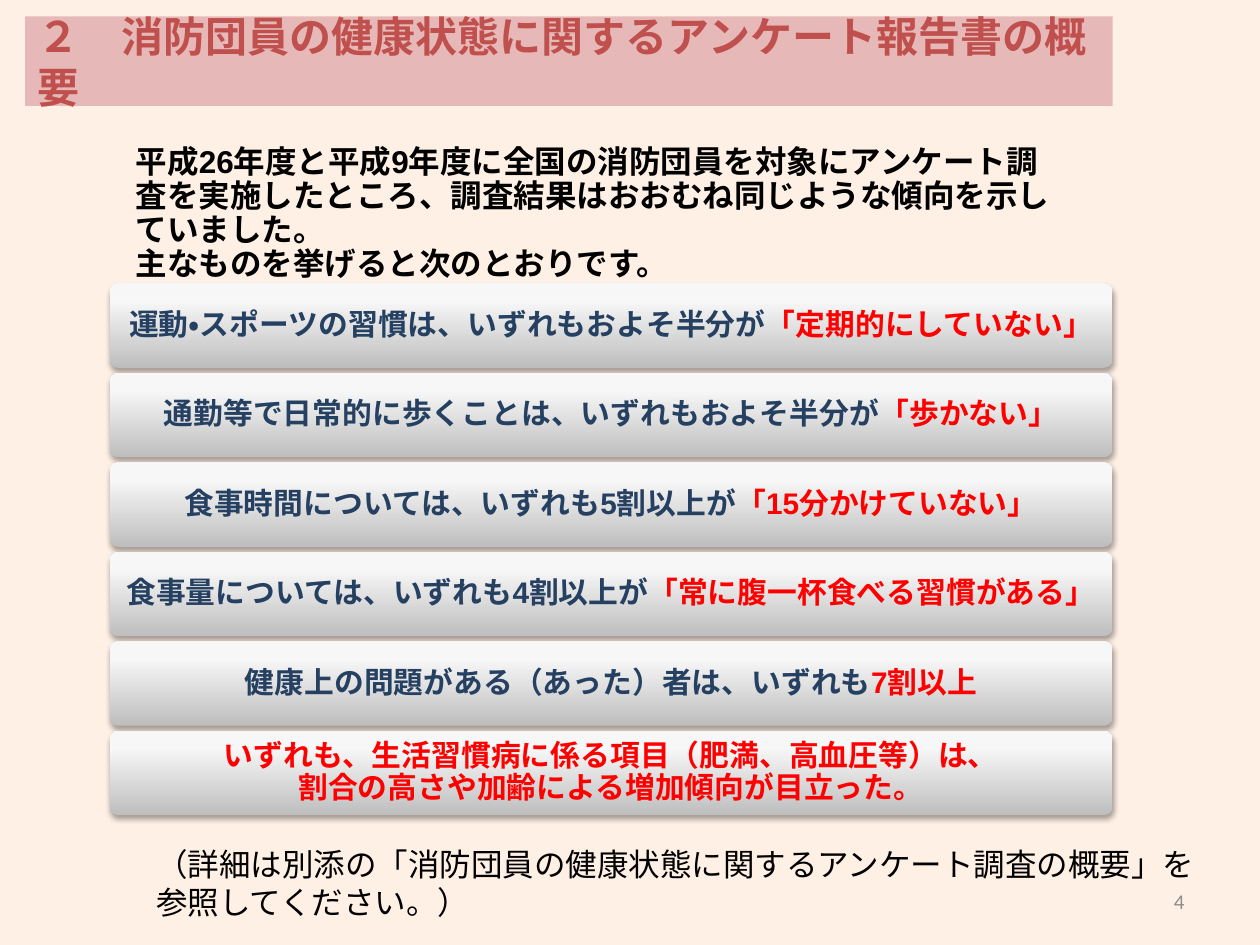
from dataclasses import dataclass
from typing import Any, NamedTuple

import pptx
import pptx.dml.color
import pptx.enum.lang
import pptx.enum.shapes
import pptx.enum.text
import pptx.oxml
import pptx.oxml.ns
import pptx.util

EMU_PER_PX = 9144
ANCHOR = pptx.enum.text.MSO_ANCHOR
ALIGN = pptx.enum.text.PP_ALIGN
AUTO_SIZE = pptx.enum.text.MSO_AUTO_SIZE


@dataclass(frozen=True)
class Theme:
    background: str = "FFF0E5"
    banner: str = "E6B9B8"
    heading: str = "C0504D"
    body: str = "000000"
    finding: str = "254061"
    emphasis: str = "FF0000"
    page: str = "8C8C8C"
    bar_stops: tuple[tuple[int, str], ...] = ((0, "BEBEBE"), (80, "F7F7F7"), (100, "F8F8F8"))
    heading_size: int = 24
    body_size: int = 18
    finding_size: int = 17
    page_size: int = 12
    heading_font: str = "Calibri"
    body_font: str = "Arial"


THEME = Theme()


class Box(NamedTuple):
    left: int
    top: int
    width: int
    height: int


class Span(NamedTuple):
    text: str
    color: str


class Style(NamedTuple):
    size: int
    font: str
    bold: bool
    frame: dict[str, Any]
    paragraph: dict[str, Any]


TIGHT = {"line_spacing": 0.9, "space_after": pptx.util.Pt(6)}
GROWING = {"word_wrap": True, "auto_size": AUTO_SIZE.SHAPE_TO_FIT_TEXT}
MIDDLE = {"word_wrap": True, "auto_size": AUTO_SIZE.NONE, "vertical_anchor": ANCHOR.MIDDLE}

HEADING = Style(THEME.heading_size, THEME.heading_font, True, MIDDLE, {"alignment": ALIGN.LEFT})
INTRO = Style(THEME.body_size, THEME.body_font, True, GROWING, TIGHT)
NOTE = Style(THEME.body_size, THEME.body_font, False, GROWING, {})
PAGE = Style(THEME.page_size, THEME.heading_font, False, MIDDLE, {"alignment": ALIGN.RIGHT})


def px(length: int) -> int:
    return length * EMU_PER_PX


FINDING = Style(
    THEME.finding_size, THEME.body_font, True,
    MIDDLE | {"margin_left": px(5), "margin_right": px(5),
              "margin_top": px(5), "margin_bottom": px(5)},
    TIGHT | {"alignment": ALIGN.CENTER},
)

FIRST_BAR = Box(87, 225, 796, 67)
BAR_PITCH = 71
FINDINGS = (
    ("運動・スポーツの習慣は、いずれもおよそ半分が", "「定期的にしていない」"),
    ("通勤等で日常的に歩くことは、いずれもおよそ半分が", "「歩かない」"),
    ("食事時間については、いずれも5割以上が", "「15分かけていない」"),
    ("食事量については、いずれも4割以上が", "「常に腹一杯食べる習慣がある」"),
    ("健康上の問題がある（あった）者は、いずれも", "7割以上"),
    ("", "いずれも、生活習慣病に係る項目（肥満、高血圧等）は、\n割合の高さや加齢による増加傾向が目立った。"),
)


def rgb(color: str) -> pptx.dml.color.RGBColor:
    return pptx.dml.color.RGBColor.from_string(color)


def apply(target: Any, values: dict[str, Any]) -> None:
    for name, value in values.items():
        setattr(target, name, value)


def place(shape: Any, box: Box) -> None:
    apply(shape, {side: px(length) for side, length in box._asdict().items()})


def write(shape: Any, spans: list[Span], style: Style) -> None:
    frame = shape.text_frame
    apply(frame, style.frame)
    paragraph = frame.paragraphs[0]
    apply(paragraph, style.paragraph)
    for span in spans:
        for number, line in enumerate(span.text.split("\n")):
            if number:
                paragraph.add_line_break()
            run = paragraph.add_run()
            run.text = line
            apply(run.font, {
                "size": pptx.util.Pt(style.size),
                "name": style.font,
                "bold": style.bold,
                "language_id": pptx.enum.lang.MSO_LANGUAGE_ID.JAPANESE,
            })
            run.font.color.rgb = rgb(span.color)


def add_text(slide: Any, box: Box, span: Span, style: Style) -> None:
    write(slide.shapes.add_textbox(*map(px, box)), [span], style)


def shade(shape: Any) -> None:
    namespace = pptx.oxml.ns.nsdecls("a")
    stops = "".join(
        f'<a:gs pos="{position * 1000}"><a:srgbClr val="{color}"/></a:gs>'
        for position, color in THEME.bar_stops
    )
    shape.fill.gradient()
    shape.fill.gradient_angle = 90
    properties = shape.element.spPr
    old_stops = properties.find(".//" + pptx.oxml.ns.qn("a:gsLst"))
    old_stops.getparent().replace(
        old_stops, pptx.oxml.parse_xml(f"<a:gsLst {namespace}>{stops}</a:gsLst>"))
    shape.shadow.inherit = False
    properties.find(pptx.oxml.ns.qn("a:effectLst")).append(pptx.oxml.parse_xml(
        f'<a:outerShdw {namespace} blurRad="40000" dist="23000" dir="5400000" rotWithShape="0">'
        '<a:srgbClr val="000000"><a:alpha val="35000"/></a:srgbClr></a:outerShdw>'))


def add_finding(slide: Any, row: int, lead: str, result: str) -> None:
    box = FIRST_BAR._replace(top=FIRST_BAR.top + row * BAR_PITCH)
    bar = slide.shapes.add_shape(
        pptx.enum.shapes.MSO_SHAPE.ROUNDED_RECTANGLE, *map(px, box))
    bar.adjustments[0] = 0.1
    bar.line.fill.background()
    shade(bar)
    spans = [Span(lead, THEME.finding), Span(result, THEME.emphasis)]
    write(bar, [span for span in spans if span.text], FINDING)


def main() -> None:
    deck = pptx.Presentation()
    apply(deck, {"slide_width": px(1000), "slide_height": px(750)})
    slide = deck.slides.add_slide(deck.slide_layouts.get_by_name("Title Only"))
    slide.background.fill.solid()
    slide.background.fill.fore_color.rgb = rgb(THEME.background)

    heading = slide.shapes.title
    place(heading, Box(20, 13, 863, 71))
    heading.fill.solid()
    heading.fill.fore_color.rgb = rgb(THEME.banner)
    write(heading, [Span("２　消防団員の健康状態に関するアンケート報告書の概要", THEME.heading)], HEADING)

    add_text(slide, Box(717, 695, 233, 40), Span("4", THEME.page), PAGE)
    for row, (lead, result) in enumerate(FINDINGS):
        add_finding(slide, row, lead, result)
    add_text(slide, Box(114, 666, 850, 71), Span(
        "（詳細は別添の「消防団員の健康状態に関するアンケート調査の概要」を参照してください。）",
        THEME.body), NOTE)
    add_text(slide, Box(98, 111, 756, 92), Span(
        "平成26年度と平成9年度に全国の消防団員を対象にアンケート調査を実施したところ、"
        "調査結果はおおむね同じような傾向を示していました。\n主なものを挙げると次のとおりです。",
        THEME.body), INTRO)
    deck.save("out.pptx")


if __name__ == "__main__":
    main()
